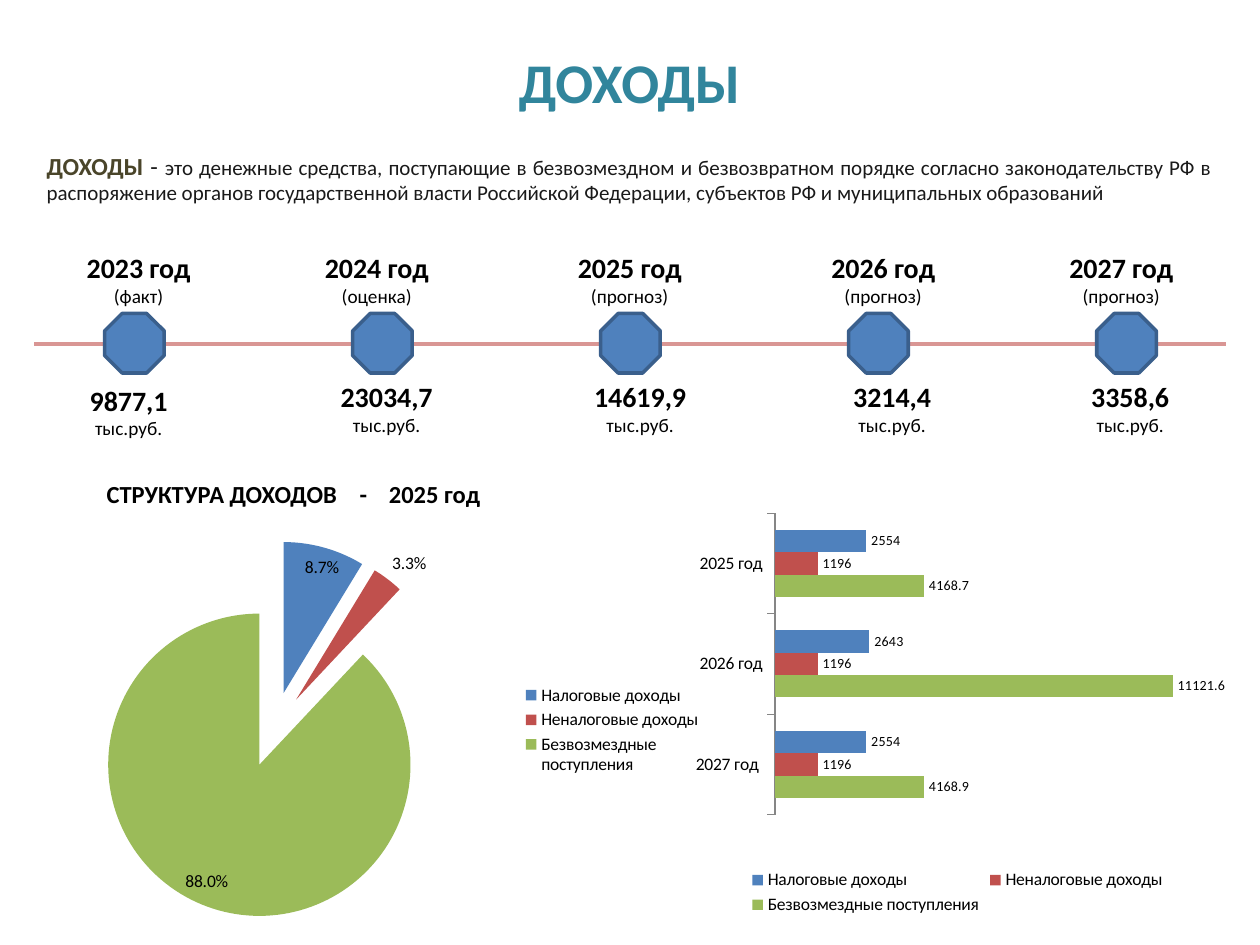
from lxml import etree
from pptx import Presentation
from pptx import util as u
from pptx.chart.data import CategoryChartData
from pptx.dml.color import RGBColor
from pptx.enum import chart as ch, shapes, text
from pptx.oxml.ns import qn

Cm, Pt = u.Cm, u.Pt
FONT = "Calibri"
COLORS = {
    "title": "31859C", "term": "4A452A", "body": "1A1A1A", "black": "000000",
    "line": "D99694", "edge": "3A5F8C", "axis": "868686",
    "tax": "4F81BD", "nontax": "C0504D", "grants": "9BBB59",
}
RGB = {name: RGBColor.from_string(value) for name, value in COLORS.items()}


def add_run(p, content, size=11, color="black", bold=False):
    r = p.add_run()
    r.text = content
    r.font.name, r.font.size, r.font.bold = FONT, Pt(size), bold
    r.font.color.rgb = RGB[color]


def add_box(left, top, width, height, align, margin=0.25, anchor=text.MSO_ANCHOR.TOP):
    """Add an empty text box with the given side margins and return its text frame."""
    tf = s.shapes.add_textbox(Cm(left), Cm(top), Cm(width), Cm(height)).text_frame
    tf.word_wrap, tf.vertical_anchor = True, anchor
    tf.margin_left = tf.margin_right = Cm(margin)
    tf.paragraphs[0].alignment = align
    return tf


prs = Presentation()
prs.slide_width, prs.slide_height = Cm(25.4), Cm(19.05)
s = prs.slides.add_slide(prs.slide_layouts[5])
ALIGN, MIDDLE = text.PP_ALIGN, text.MSO_ANCHOR.MIDDLE

# Title and definition
title = s.shapes.title
title.left, title.top, title.width, title.height = Cm(0.69), Cm(0.76), Cm(24), Cm(1.75)
title.text_frame.vertical_anchor = MIDDLE
p = title.text_frame.paragraphs[0]
p.alignment = ALIGN.CENTER
add_run(p, "ДОХОДЫ", size=32, color="title", bold=True)

p = add_box(0.69, 2.9, 24, 1.37, ALIGN.JUSTIFY, anchor=MIDDLE).paragraphs[0]
add_run(p, "ДОХОДЫ", size=14, color="term", bold=True)
add_run(p, " - ", size=14, color="body")
add_run(p, "это денежные средства, поступающие в безвозмездном и безвозвратном порядке "
           "согласно законодательству РФ в распоряжение органов государственной власти "
           "Российской Федерации, субъектов РФ и муниципальных образований",
        size=12, color="body")

# Timeline
line = s.shapes.add_connector(shapes.MSO_CONNECTOR.STRAIGHT, Cm(0.69), Cm(6.93), Cm(24.71), Cm(6.93))
line.line.color.rgb, line.line.width = RGB["line"], Pt(2.25)
etree.SubElement(line._element.spPr, qn("a:effectLst"))

# year, status, left of the year, amount, left and top of the amount
years = [
    ("2023 год", "(факт)", 1.5, "9877,1", 1.3, 7.6),
    ("2024 год", "(оценка)", 6.3, "23034,7", 6.5, 7.52),
    ("2025 год", "(прогноз)", 11.4, "14619,9", 11.61, 7.52),
    ("2026 год", "(прогноз)", 16.51, "3214,4", 16.69, 7.52),
    ("2027 год", "(прогноз)", 21.31, "3358,6", 21.49, 7.52),
]
for i, (year, status, year_left, amount, amount_left, amount_top) in enumerate(years):
    sp = s.shapes.add_shape(shapes.MSO_SHAPE.OCTAGON, Cm(2.11 + 5 * i), Cm(6.32), Cm(1.2), Cm(1.2))
    sp.shadow.inherit = False
    sp.fill.solid()
    sp.fill.fore_color.rgb = RGB["tax"]
    sp.line.color.rgb, sp.line.width = RGB["edge"], Pt(2)
    for head, note, left, top in ((year, status, year_left, 4.93),
                                  (amount, "тыс.руб.", amount_left, amount_top)):
        tf = add_box(left, top, 2.59, 1.42, ALIGN.CENTER, margin=0)
        add_run(tf.paragraphs[0], head, size=16, bold=True)
        p = tf.add_paragraph()
        p.alignment = ALIGN.CENTER
        add_run(p, note)

# Heading of the pie chart, spaced by tab stops
p = add_box(1.9, 9.53, 8.61, 0.86, ALIGN.LEFT, anchor=MIDDLE).paragraphs[0]
add_run(p, "СТРУКТУРА ДОХОДОВ\t-\t2025 год", size=14, bold=True)
tabs = etree.SubElement(p._p.get_or_add_pPr(), qn("a:tabLst"))
for stop in (5.1, 5.69):
    etree.SubElement(tabs, qn("a:tab"), pos=str(Cm(stop)), algn="l")

# Charts
names = ["Налоговые доходы", "Неналоговые доходы", "Безвозмездные поступления"]
keys = ["tax", "nontax", "grants"]
values = [(2554, 2643, 2554), (1196, 1196, 1196), (4168.9, 11121.6, 4168.7)]

bar_data = CategoryChartData()
bar_data.categories = ["2027 год ", "2026 год", "2025 год"]
for name, vals in reversed(list(zip(names, values))):
    bar_data.add_series(name, vals)
pie_data = CategoryChartData(number_format="0.0%")
pie_data.categories = names
pie_data.add_series("Series 1", (0.087, 0.033, 0.88))

KIND, LEGEND = ch.XL_CHART_TYPE, ch.XL_LEGEND_POSITION
charts = []
for kind, box, data, legend, plot_area in (
    (KIND.BAR_CLUSTERED, (13.89, 9.73, 10.82, 8.81), bar_data, LEGEND.BOTTOM, (0.16, 0.07, 0.8, 0.69)),
    (KIND.PIE, (1.7, 10.9, 12.7, 7.62), pie_data, LEGEND.RIGHT, (0, 0, 0.6, 1)),
):
    chart = s.shapes.add_chart(kind, *map(Cm, box), data).chart
    chart.has_title = False
    chart.font.name, chart.font.size = FONT, Pt(10)
    chart.font.color.rgb = RGB["black"]
    chart.has_legend = True
    chart.legend.position, chart.legend.include_in_layout = legend, False
    area = chart._chartSpace.chart.plotArea
    for old in area.findall(qn("c:layout")):
        area.remove(old)
    layout = etree.Element(qn("c:layout"))
    area.insert(0, layout)
    manual = etree.SubElement(layout, qn("c:manualLayout"))
    settings = [("layoutTarget", "inner"), ("xMode", "edge"), ("yMode", "edge")]
    for tag, val in settings + list(zip("xywh", plot_area)):
        etree.SubElement(manual, qn("c:" + tag), val=str(val))
    charts.append(chart)
bar, pie = charts

bar.plots[0].gap_width = 150
bar.plots[0].overlap = 0
bar.value_axis.visible = False
bar.value_axis.has_major_gridlines = False
bar.value_axis.minimum_scale, bar.value_axis.maximum_scale = 0, 12000
bar.category_axis.major_tick_mark = ch.XL_TICK_MARK.OUTSIDE
bar.category_axis.format.line.color.rgb = RGB["axis"]
for series, key in zip(bar.plots[0].series, reversed(keys)):
    series.format.fill.solid()
    series.format.fill.fore_color.rgb = RGB[key]
    series.data_labels.show_value = True
    series.data_labels.font.size = Pt(8)

pie.plots[0].vary_by_categories = True
slices = pie.plots[0].series[0]
explosion = etree.Element(qn("c:explosion"), val="25")
slices._element.find(qn("c:tx")).addnext(explosion)
for i, key in enumerate(keys):
    fill = slices.points[i].format.fill
    fill.solid()
    fill.fore_color.rgb = RGB[key]
labels = slices.data_labels
labels.show_value = True
labels.number_format, labels.number_format_is_linked = "0.0%", False
labels.position = ch.XL_LABEL_POSITION.BEST_FIT

prs.save("out.pptx")
